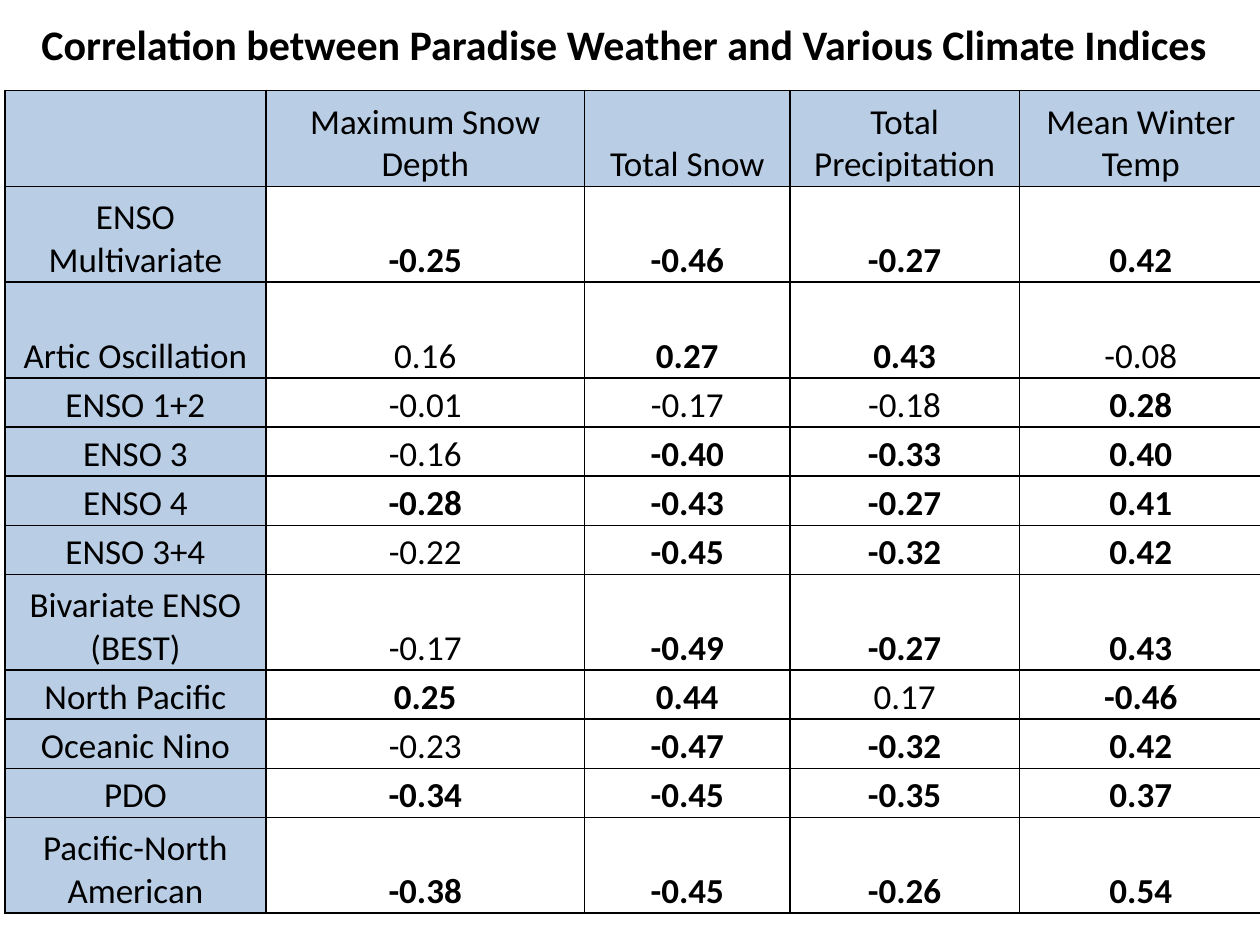
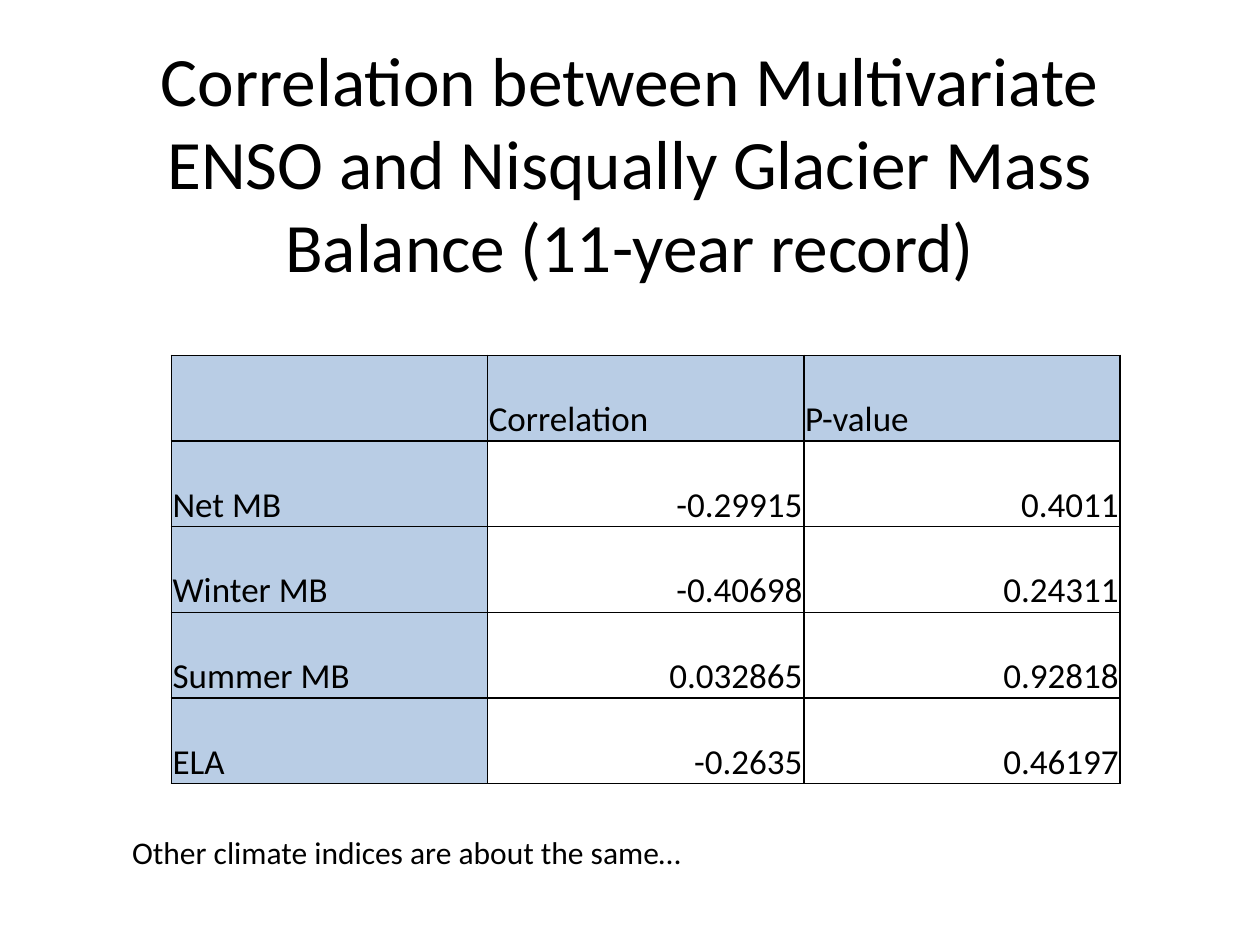
from dataclasses import dataclass

from lxml.etree import SubElement
from pptx import Presentation
from pptx.dml.color import RGBColor as RGB
from pptx.enum.text import MSO_ANCHOR as Anchor, PP_ALIGN as Align
from pptx.oxml.ns import qn
from pptx.util import Inches, Pt


@dataclass(frozen=True)
class Theme:
    font: str = "Calibri"
    ink: RGB = RGB(0x00, 0x00, 0x00)
    header_fill: RGB = RGB(0xB9, 0xCD, 0xE5)
    table_title_size: float = 24
    title_size: float = 39.6
    cell_size: float = 20
    note_size: float = 18
    border_width: float = 1


theme = Theme()


def write(frame, text, size, align=Align.LEFT, anchor=Anchor.TOP, bold=False):
    """Put one styled paragraph into a text frame."""
    frame.word_wrap = True
    frame.vertical_anchor = anchor
    paragraph = frame.paragraphs[0]
    paragraph.alignment = align
    run = paragraph.add_run()
    run.text = text
    run.font.color.rgb = theme.ink
    for name, value in {"name": theme.font, "size": Pt(size), "bold": bold}.items():
        setattr(run.font, name, value)


def add_grid(slide, left, top, widths, heights, rows, label_align, value_align, is_bold):
    """Add a bordered table with a tinted header row and label column."""
    table = slide.shapes.add_table(
        len(heights), len(widths), Inches(left), Inches(top),
        Inches(sum(widths)), Inches(sum(heights))).table
    table.first_row = table.horz_banding = False
    for column, width in zip(table.columns, widths):
        column.width = Inches(width)
    for row, height in zip(table.rows, heights):
        row.height = Inches(height)

    for row_index, texts in enumerate(rows):
        for column_index, text in enumerate(texts):
            cell = table.cell(row_index, column_index)
            is_label = row_index == 0 or column_index == 0
            cell_format = {
                "margin_left": Inches(0.01), "margin_right": Inches(0.01),
                "margin_top": Inches(0.01), "margin_bottom": 0,
                "vertical_anchor": Anchor.BOTTOM,
            }
            for name, value in cell_format.items():
                setattr(cell, name, value)

            # Borders come before the fill in the cell properties
            properties = cell._tc.get_or_add_tcPr()
            for side in ("lnL", "lnR", "lnT", "lnB"):
                border = SubElement(properties, qn(f"a:{side}"),
                                    w=str(Pt(theme.border_width)))
                solid = SubElement(border, qn("a:solidFill"))
                SubElement(solid, qn("a:srgbClr"), val=str(theme.ink))
            if is_label:
                cell.fill.solid()
                cell.fill.fore_color.rgb = theme.header_fill
            else:
                cell.fill.background()

            if text:
                write(cell.text_frame, text, theme.cell_size,
                      label_align if is_label else value_align,
                      Anchor.BOTTOM, not is_label and is_bold(text))


presentation = Presentation()
presentation.slide_width = Inches(10)
presentation.slide_height = Inches(7.5)
blank = presentation.slide_layouts[6]

# Slide 1: weather against climate indices
slide = presentation.slides.add_slide(blank)
weather_rows = [
    ("", "Maximum Snow Depth", "Total Snow", "Total Precipitation", "Mean Winter Temp"),
    ("ENSO Multivariate", "-0.25", "-0.46", "-0.27", "0.42"),
    ("Artic Oscillation", "0.16", "0.27", "0.43", "-0.08"),
    ("ENSO 1+2", "-0.01", "-0.17", "-0.18", "0.28"),
    ("ENSO 3", "-0.16", "-0.40", "-0.33", "0.40"),
    ("ENSO 4", "-0.28", "-0.43", "-0.27", "0.41"),
    ("ENSO 3+4", "-0.22", "-0.45", "-0.32", "0.42"),
    ("Bivariate ENSO (BEST)", "-0.17", "-0.49", "-0.27", "0.43"),
    ("North Pacific", "0.25", "0.44", "0.17", "-0.46"),
    ("Oceanic Nino", "-0.23", "-0.47", "-0.32", "0.42"),
    ("PDO", "-0.34", "-0.45", "-0.35", "0.37"),
    ("Pacific-North American", "-0.38", "-0.45", "-0.26", "0.54"),
]
tall_labels = {"", "ENSO Multivariate", "Artic Oscillation",
               "Bivariate ENSO (BEST)", "Pacific-North American"}
weather_heights = [0.76 if row[0] in tall_labels else 0.39 for row in weather_rows]

# Correlations of at least 0.25 in size stand out in bold
add_grid(slide, 0.04, 0.72, [2.07, 2.53, 1.63, 1.82, 1.93], weather_heights,
         weather_rows, Align.CENTER, Align.CENTER,
         lambda text: abs(float(text)) >= 0.25)
title = slide.shapes.add_textbox(Inches(0.23), Inches(0.1), Inches(9.54), Inches(0.5))
write(title.text_frame,
      "Correlation between Paradise Weather and Various Climate Indices",
      theme.table_title_size, bold=True)

# Slide 2: glacier mass balance
slide = presentation.slides.add_slide(blank)
title = slide.shapes.add_textbox(Inches(0.5), Inches(0.66), Inches(9), Inches(1.25))
write(title.text_frame,
      "Correlation between Multivariate ENSO and Nisqually Glacier Mass Balance "
      "(11-year record)",
      theme.title_size, Align.CENTER, Anchor.MIDDLE)

glacier_rows = [
    ("", "Correlation", "P-value"),
    ("Net MB", "-0.29915", "0.4011"),
    ("Winter MB", "-0.40698", "0.24311"),
    ("Summer MB", "0.032865", "0.92818"),
    ("ELA", "-0.2635", "0.46197"),
]
add_grid(slide, 1.36, 2.82, [2.51] * 3, [0.68] * len(glacier_rows),
         glacier_rows, Align.LEFT, Align.RIGHT, lambda text: False)

note = slide.shapes.add_textbox(Inches(0.95), Inches(6.56), Inches(7.45), Inches(0.4))
write(note.text_frame, "Other climate indices are about the same…", theme.note_size)

presentation.save("out.pptx")
